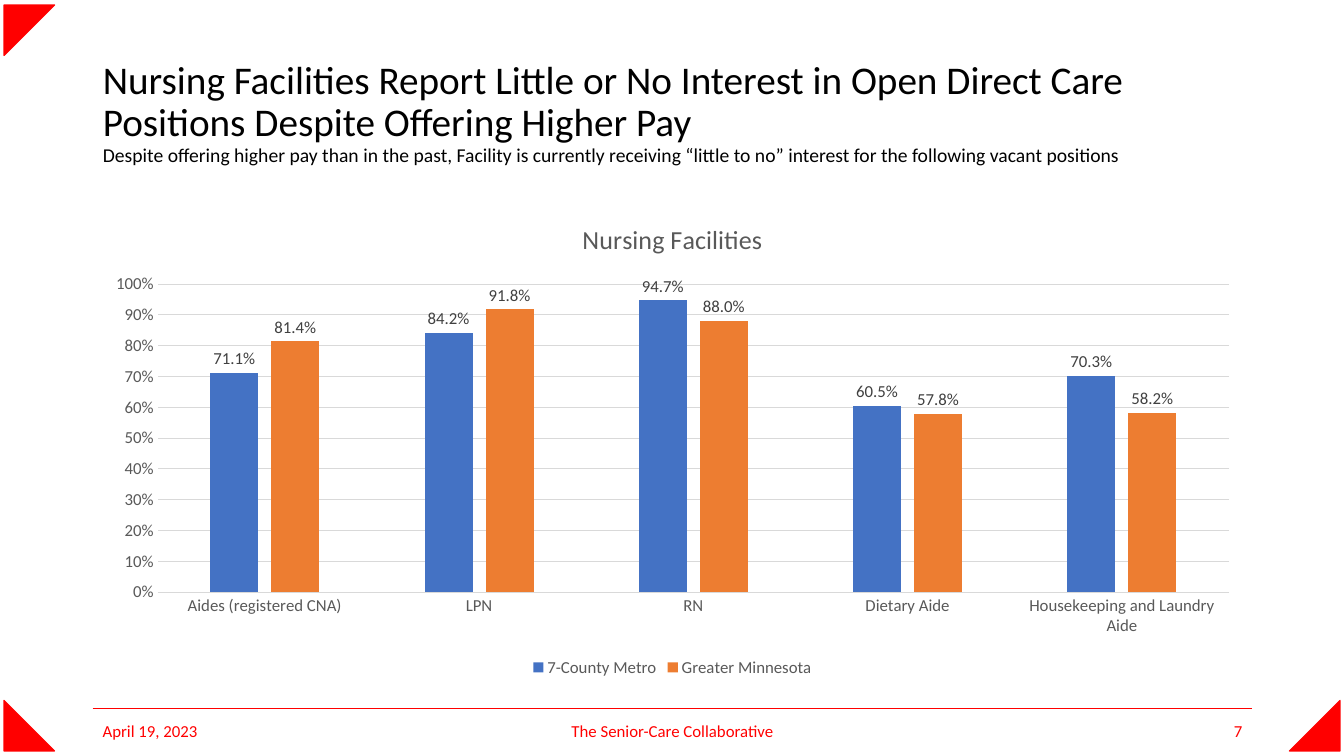
from lxml import etree
from pptx import Presentation
from pptx.chart.data import CategoryChartData
from pptx.dml.color import RGBColor
from pptx.enum.chart import (XL_CHART_TYPE, XL_LABEL_POSITION as LABEL_POS,
                             XL_LEGEND_POSITION as LEGEND_POS, XL_TICK_MARK)
from pptx.enum.shapes import MSO_CONNECTOR, MSO_SHAPE
from pptx.enum.text import MSO_ANCHOR, PP_ALIGN
from pptx.oxml.ns import qn
from pptx.util import Inches, Pt

FONT = "Calibri"
BLACK = RGBColor(0x00, 0x00, 0x00)
RED = RGBColor(0xFF, 0x00, 0x00)
BLUE = RGBColor(0x44, 0x72, 0xC4)
ORANGE = RGBColor(0xED, 0x7D, 0x31)
GRID = RGBColor(0xD9, 0xD9, 0xD9)
GRAY = RGBColor(0x59, 0x59, 0x59)
DARK = RGBColor(0x40, 0x40, 0x40)

LEFT, WIDTH = 0.92, 11.5
CATEGORIES = ["Aides (registered CNA)", "LPN", "RN", "Dietary Aide",
              "Housekeeping and Laundry Aide"]
SERIES = [
    ("7-County Metro", BLUE, (0.711, 0.842, 0.947, 0.605, 0.703)),
    ("Greater Minnesota", ORANGE, (0.814, 0.918, 0.88, 0.578, 0.582)),
]


def style_font(font, size=12, color=GRAY):
    font.name, font.size, font.bold = FONT, Pt(size), False
    font.color.rgb = color


def add_text(p, text, **fmt):
    r = p.add_run()
    r.text = text
    style_font(r.font, **fmt)


def style_line(line, color, width):
    line.color.rgb = color
    line.width = Pt(width)


def place_plot(chart, **fractions):
    """Fix the inner plot area as fractions of the chart frame."""
    plot_area = chart.plots[0]._element.getparent()
    for old in plot_area.findall(qn("c:layout")):
        plot_area.remove(old)
    layout = etree.Element(qn("c:layout"))
    plot_area.insert(0, layout)
    manual = etree.SubElement(layout, qn("c:manualLayout"))
    settings = {"layoutTarget": "inner", "xMode": "edge", "yMode": "edge", **fractions}
    for tag, value in settings.items():
        etree.SubElement(manual, qn(f"c:{tag}")).set("val", str(value))


class SlideBuilder:
    def __init__(self, prs):
        self.s = prs.slides.add_slide(prs.slide_layouts[5])
        self.shapes = self.s.shapes

    def corner(self, x, y, rotation):
        sp = self.shapes.add_shape(MSO_SHAPE.RIGHT_TRIANGLE, Inches(x), Inches(y),
                                   Inches(0.5), Inches(0.5))
        sp.rotation = rotation
        sp.shadow.inherit = False
        sp.fill.solid()
        sp.fill.fore_color.rgb = RED
        style_line(sp.line, RED, 1)

    def rule(self, y):
        line = self.shapes.add_connector(MSO_CONNECTOR.STRAIGHT, Inches(LEFT), Inches(y),
                                         Inches(LEFT + WIDTH), Inches(y))
        style_line(line.line, RED, 0.5)
        etree.SubElement(line._element.spPr, qn("a:effectLst"))

    def title(self, heading, subheading):
        sp = self.shapes.title
        sp.left, sp.top = Inches(LEFT), Inches(0.4)
        sp.width, sp.height = Inches(WIDTH), Inches(1.45)
        tf = sp.text_frame
        tf.word_wrap = True
        tf.vertical_anchor = MSO_ANCHOR.MIDDLE
        p = tf.paragraphs[0]
        p.alignment = PP_ALIGN.LEFT
        p.line_spacing = 0.9
        add_text(p, heading, size=28, color=BLACK)
        p.add_line_break()
        add_text(p, subheading, size=14, color=BLACK)

    def footer(self, text, x, width, align):
        box = self.shapes.add_textbox(Inches(x), Inches(7.05), Inches(width), Inches(0.4))
        tf = box.text_frame
        tf.word_wrap = True
        tf.vertical_anchor = MSO_ANCHOR.MIDDLE
        p = tf.paragraphs[0]
        p.alignment = align
        add_text(p, text, color=RED)

    def column_chart(self, title):
        data = CategoryChartData(number_format="0.0%")
        data.categories = CATEGORIES
        for name, _, values in SERIES:
            data.add_series(name, values)
        chart = self.shapes.add_chart(XL_CHART_TYPE.COLUMN_CLUSTERED, Inches(LEFT), Inches(2),
                                      Inches(WIDTH), Inches(4.76), data).chart
        style_font(chart.font, size=10, color=BLACK)
        chart.has_title = True
        add_text(chart.chart_title.text_frame.paragraphs[0], title, size=18.6)
        chart.chart_title.include_in_layout = False
        chart.has_legend = True
        chart.legend.position = LEGEND_POS.BOTTOM
        chart.legend.include_in_layout = False
        style_font(chart.legend.font)
        self.axes(chart)
        self.columns(chart.plots[0])
        place_plot(chart, x=0.056, y=0.172, w=0.924, h=0.642)

    def axes(self, chart):
        cat, val = chart.category_axis, chart.value_axis
        for axis in (cat, val):
            axis.major_tick_mark = axis.minor_tick_mark = XL_TICK_MARK.NONE
            style_font(axis.tick_labels.font)
        style_line(cat.format.line, GRID, 0.75)
        val.format.line.fill.background()
        val.minimum_scale, val.maximum_scale, val.major_unit = 0, 1, 0.1
        val.tick_labels.number_format = "0%"
        val.tick_labels.number_format_is_linked = False
        style_line(val.major_gridlines.format.line, GRID, 0.75)

    def columns(self, plot):
        plot.gap_width, plot.overlap = 219, -27
        plot.vary_by_categories = False
        for series, (_, color, _) in zip(plot.series, SERIES):
            series.format.fill.solid()
            series.format.fill.fore_color.rgb = color
            labels = series.data_labels
            labels.show_value = True
            labels.position = LABEL_POS.OUTSIDE_END
            labels.number_format = "0.0%"
            labels.number_format_is_linked = False
            style_font(labels.font, color=DARK)


def main():
    prs = Presentation()
    prs.slide_width, prs.slide_height = Inches(13.33), Inches(7.5)
    slide = SlideBuilder(prs)
    for x, y, rotation in ((0.04, 0.05, 90), (12.79, 6.95, 270), (0.04, 6.95, 0)):
        slide.corner(x, y, rotation)
    slide.rule(7.03)
    slide.title("Nursing Facilities Report Little or No Interest in Open Direct Care "
                "Positions Despite Offering Higher Pay",
                "Despite offering higher pay than in the past, Facility is currently "
                "receiving “little to no” interest for the following vacant positions")
    slide.column_chart("Nursing Facilities")
    slide.footer("April 19, 2023", LEFT, 3, PP_ALIGN.LEFT)
    slide.footer("The Senior-Care Collaborative", 4.42, 4.5, PP_ALIGN.CENTER)
    slide.footer("7", 9.42, 3, PP_ALIGN.RIGHT)
    prs.save("out.pptx")


if __name__ == "__main__":
    main()
